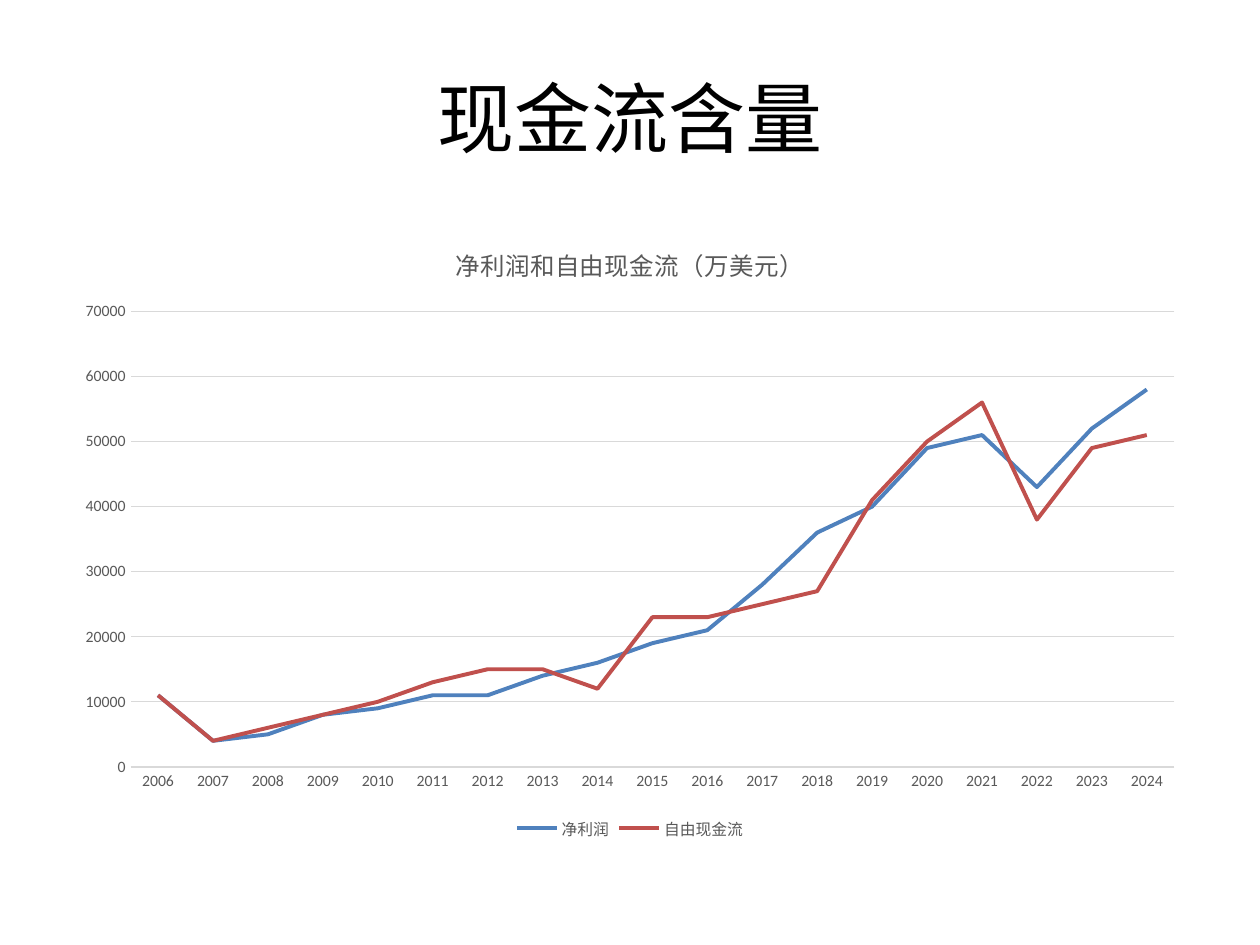
from pptx import Presentation
from pptx.chart.data import CategoryChartData
from pptx.dml.color import RGBColor
from pptx.enum.chart import XL_CHART_TYPE, XL_LEGEND_POSITION, XL_MARKER_STYLE, XL_TICK_MARK
from pptx.enum.text import MSO_ANCHOR, PP_ALIGN
from pptx.util import Inches, Pt

LINE_CHART = XL_CHART_TYPE.LINE
LEGEND_BOTTOM = XL_LEGEND_POSITION.BOTTOM
NO_MARKER = XL_MARKER_STYLE.NONE
NO_TICK = XL_TICK_MARK.NONE
MIDDLE = MSO_ANCHOR.MIDDLE
CENTER = PP_ALIGN.CENTER

# Content
HEADING = "现金流含量"
CHART_HEADING = "净利润和自由现金流（万美元）"
YEARS = [str(year) for year in range(2006, 2025)]
CASH_SERIES = {
    "净利润": [11000, 4000, 5000, 8000, 9000, 11000, 11000, 14000, 16000, 19000,
            21000, 28000, 36000, 40000, 49000, 51000, 43000, 52000, 58000],
    "自由现金流": [11000, 4000, 6000, 8000, 10000, 13000, 15000, 15000, 12000, 23000,
              23000, 25000, 27000, 41000, 50000, 56000, 38000, 49000, 51000],
}

THEME = {
    "font": "Calibri",
    "black": RGBColor(0x00, 0x00, 0x00),
    "grey": RGBColor(0x59, 0x59, 0x59),
    "grid": RGBColor(0xD9, 0xD9, 0xD9),
    "series": [RGBColor(0x4F, 0x81, 0xBD), RGBColor(0xC0, 0x50, 0x4D)],
    "heading_size": 44,
    "chart_heading_size": 14,
    "chart_size": 10,
    "label_size": 9,
    "grid_width": 0.75,
    "series_width": 2.25,
}


def style_font(font, size, color, bold=False):
    font.name = THEME["font"]
    font.size = Pt(size)
    font.bold = bold
    font.color.rgb = color


def style_line(line, color, width):
    line.color.rgb = color
    line.width = Pt(width)


def add_heading(slide):
    heading = slide.shapes.title
    heading.left, heading.top = Inches(0.5), Inches(0.3)
    heading.width, heading.height = Inches(9), Inches(1.25)
    frame = heading.text_frame
    frame.vertical_anchor = MIDDLE
    paragraph = frame.paragraphs[0]
    paragraph.alignment = CENTER
    run = paragraph.add_run()
    run.text = HEADING
    style_font(run.font, THEME["heading_size"], THEME["black"])


def add_cash_chart(slide):
    cash_data = CategoryChartData(number_format="General")
    cash_data.categories = YEARS
    for name, amounts in CASH_SERIES.items():
        cash_data.add_series(name, amounts)
    chart = slide.shapes.add_chart(
        LINE_CHART, Inches(0.5), Inches(1.75), Inches(9), Inches(4.95), cash_data
    ).chart
    style_font(chart.font, THEME["chart_size"], THEME["black"])

    # Chart title
    chart.has_title = True
    chart.chart_title.include_in_layout = False
    run = chart.chart_title.text_frame.paragraphs[0].add_run()
    run.text = CHART_HEADING
    style_font(run.font, THEME["chart_heading_size"], THEME["grey"])

    # Axes and gridlines
    years, amounts = chart.category_axis, chart.value_axis
    for axis in (years, amounts):
        axis.major_tick_mark = axis.minor_tick_mark = NO_TICK
        style_font(axis.tick_labels.font, THEME["label_size"], THEME["grey"])
    style_line(years.format.line, THEME["grid"], THEME["grid_width"])
    amounts.format.line.fill.background()
    amounts.minimum_scale, amounts.maximum_scale = 0, 70000
    amounts.major_unit = 10000
    amounts.has_major_gridlines = True
    style_line(amounts.major_gridlines.format.line, THEME["grid"], THEME["grid_width"])

    # Legend
    chart.has_legend = True
    chart.legend.position = LEGEND_BOTTOM
    chart.legend.include_in_layout = False
    style_font(chart.legend.font, THEME["label_size"], THEME["grey"])

    # Series lines
    plot = chart.plots[0]
    plot.vary_by_categories = False
    for series, color in zip(plot.series, THEME["series"]):
        series.smooth = False
        series.marker.style = NO_MARKER
        style_line(series.format.line, color, THEME["series_width"])


def main():
    prs = Presentation()
    prs.slide_width, prs.slide_height = Inches(10), Inches(7.5)
    slide = prs.slides.add_slide(prs.slide_layouts[5])
    add_heading(slide)
    add_cash_chart(slide)
    prs.save("out.pptx")


if __name__ == "__main__":
    main()
